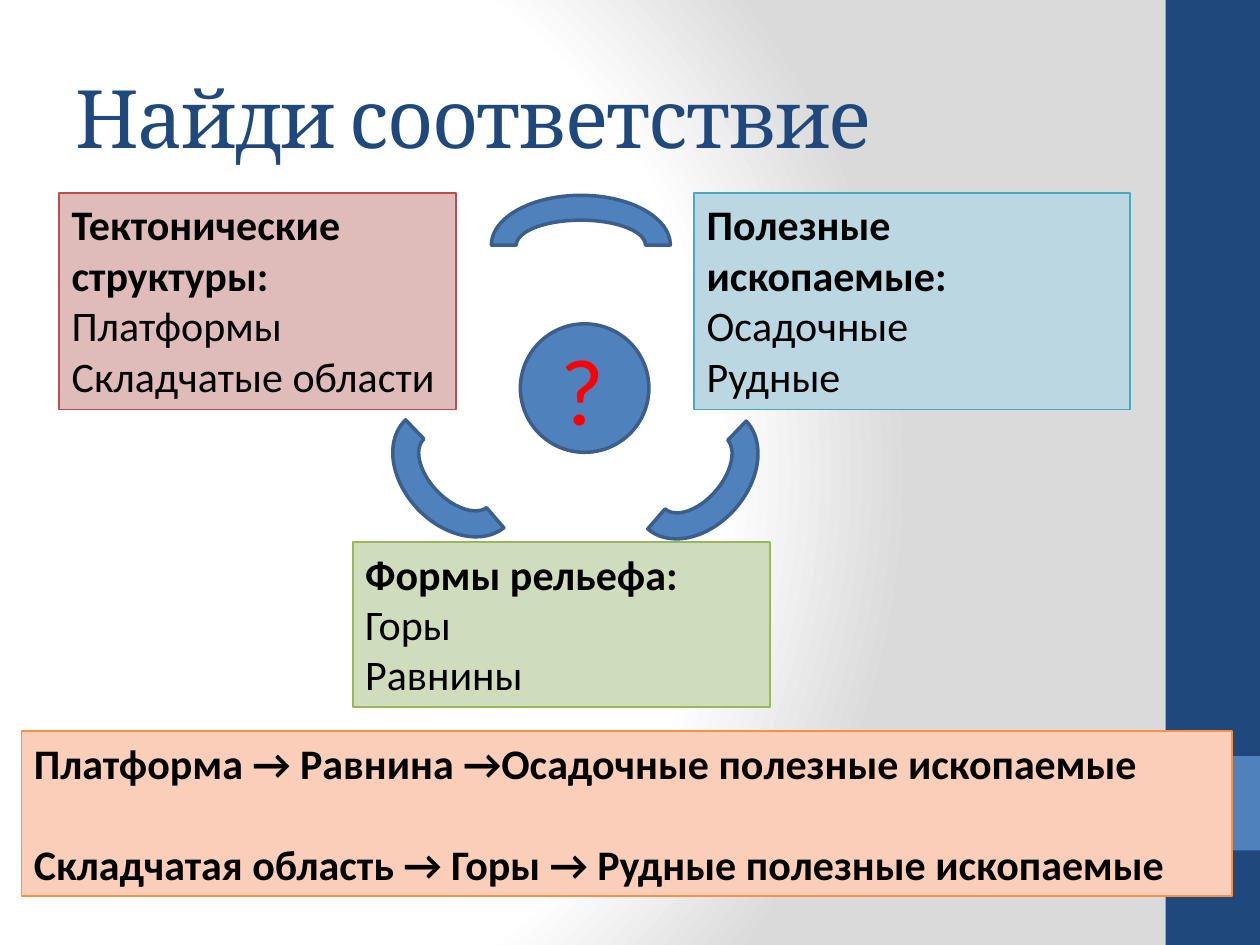
from pptx import Presentation
from pptx.dml.color import RGBColor
from pptx.enum.shapes import MSO_SHAPE as Shape
from pptx.enum.text import MSO_ANCHOR as Anchor, MSO_AUTO_SIZE as AutoSize, PP_ALIGN as Align
from pptx.oxml import parse_xml
from pptx.util import Inches, Pt

NAVY, BLUE, BLUE_EDGE = "1F497D", "4F81BD", "3A5F8C"
GRADIENT_STOPS = [(0, "FFFFFF"), (75, "FFFFFF"), (100, "DADADA")]
TOPICS = [
    ((0.47, 1.53, 3.15, 1.72), "DFBBBA", "BF4C48",
     ["Тектонические структуры:", "Платформы", "Складчатые области"]),
    ((2.8, 4.3, 3.31, 1.31), "D0DDBC", "98B955",
     ["Формы рельефа:", "Горы", "Равнины"]),
    ((5.51, 1.53, 3.46, 1.72), "BAD7E2", "46AAC5",
     ["Полезные ископаемые:", "Осадочные", "Рудные"]),
]
ANSWERS = ["Платформа → Равнина →Осадочные полезные ископаемые",
           "Складчатая область → Горы → Рудные полезные ископаемые"]
SIDE_ARCS = [((3.04, 3.33, 1.16, 0.84), 226.2), ((4.94, 3.34, 1.16, 0.84), 130.9)]


def color(value):
    return RGBColor.from_string(value)


def place(box):
    return [Inches(length) for length in box]


def set_font(font, size, value, name="Calibri", bold=False):
    font.name, font.size, font.bold = name, Pt(size), bold
    font.color.rgb = color(value)


def paint_background(slide):
    slide.background.fill.solid()
    stops = "".join(f'<a:gs pos="{position * 1000}"><a:srgbClr val="{value}"/></a:gs>'
                    for position, value in GRADIENT_STOPS)
    gradient = parse_xml(
        '<a:gradFill xmlns:a="http://schemas.openxmlformats.org/drawingml/2006/main" '
        f'rotWithShape="1"><a:gsLst>{stops}</a:gsLst><a:path path="circle">'
        '<a:fillToRect l="20000" t="50000" r="100000" b="50000"/></a:path></a:gradFill>')
    solid = slide.element.xpath("p:cSld/p:bg/p:bgPr/a:solidFill")[0]
    solid.getparent().replace(solid, gradient)


def add_figure(slide, kind, box, fill, edge=None, width=2, rotation=0):
    figure = slide.shapes.add_shape(kind, *place(box))
    figure.shadow.inherit = False
    figure.rotation = rotation
    figure.fill.solid()
    figure.fill.fore_color.rgb = color(fill)
    if edge:
        figure.line.color.rgb = color(edge)
        figure.line.width = Pt(width)
    else:
        figure.line.fill.background()
    return figure


def add_panel(slide, box, fill, edge, lines, bold_lines=1, gap=0):
    panel = add_figure(slide, Shape.RECTANGLE, box, fill, edge, width=1)
    frame = panel.text_frame
    frame.word_wrap = True
    frame.auto_size = AutoSize.SHAPE_TO_FIT_TEXT
    frame.vertical_anchor = Anchor.TOP
    frame.text = "\n".join(lines)
    for index, paragraph in enumerate(frame.paragraphs):
        paragraph.alignment = Align.LEFT
        paragraph.space_before = Pt(gap if index else 0)
        set_font(paragraph.font, 24, "000000", bold=index < bold_lines)


def set_title(slide, text):
    title = slide.shapes.title
    title.left, title.top, title.width, title.height = place((0.5, 0.3, 8.33, 1.25))
    frame = title.text_frame
    frame.text = text
    frame.auto_size = AutoSize.NONE
    frame.vertical_anchor = Anchor.MIDDLE
    heading = frame.paragraphs[0]
    heading.alignment = Align.LEFT
    set_font(heading.font, 46, NAVY, "Cambria")
    heading.runs[0].font._element.set("spc", "-100")


def add_question(slide):
    add_figure(slide, Shape.OVAL, (4.13, 2.57, 1.02, 1.02), BLUE, BLUE_EDGE)
    question = slide.shapes.add_textbox(*place((4.35, 2.58, 0.63, 1.01)))
    frame = question.text_frame
    frame.word_wrap = True
    frame.auto_size = AutoSize.SHAPE_TO_FIT_TEXT
    frame.text = "?"
    set_font(frame.paragraphs[0].font, 54, "FF0000")


def add_arcs(slide):
    add_figure(slide, Shape.BLOCK_ARC, (3.9, 1.55, 1.42, 0.79), BLUE, BLUE_EDGE)
    for box, rotation in SIDE_ARCS:
        arc = add_figure(slide, Shape.BLOCK_ARC, box, BLUE, BLUE_EDGE, rotation=rotation)
        for index, value in enumerate((109.79, 0, 0.25)):
            arc.adjustments[index] = value


def main():
    deck = Presentation()
    deck.slide_width, deck.slide_height = Inches(10), Inches(7.5)
    slide = deck.slides.add_slide(deck.slide_layouts[5])
    paint_background(slide)
    add_figure(slide, Shape.RECTANGLE, (9.25, 0, 0.75, 7.5), NAVY)
    add_figure(slide, Shape.RECTANGLE, (9.25, 6, 0.75, 0.75), BLUE)
    set_title(slide, "Найди соответствие")
    for box, fill, edge, lines in TOPICS:
        add_panel(slide, box, fill, edge, lines)
    add_arcs(slide)
    add_question(slide)
    add_panel(slide, (0.17, 5.8, 9.61, 1.31), "FBCEB9", "F69240", ANSWERS,
              bold_lines=2, gap=29)
    deck.save("out.pptx")


if __name__ == "__main__":
    main()
